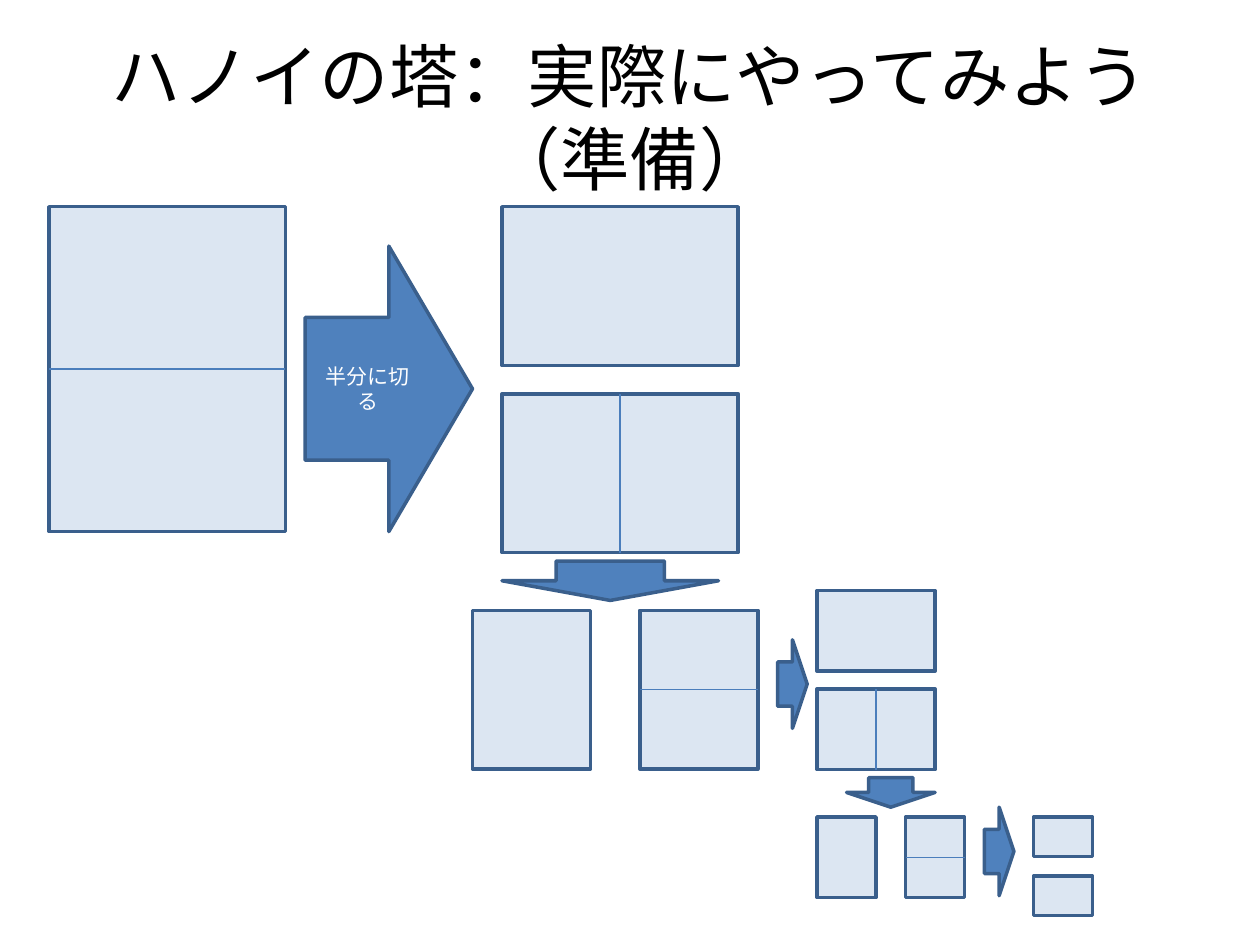
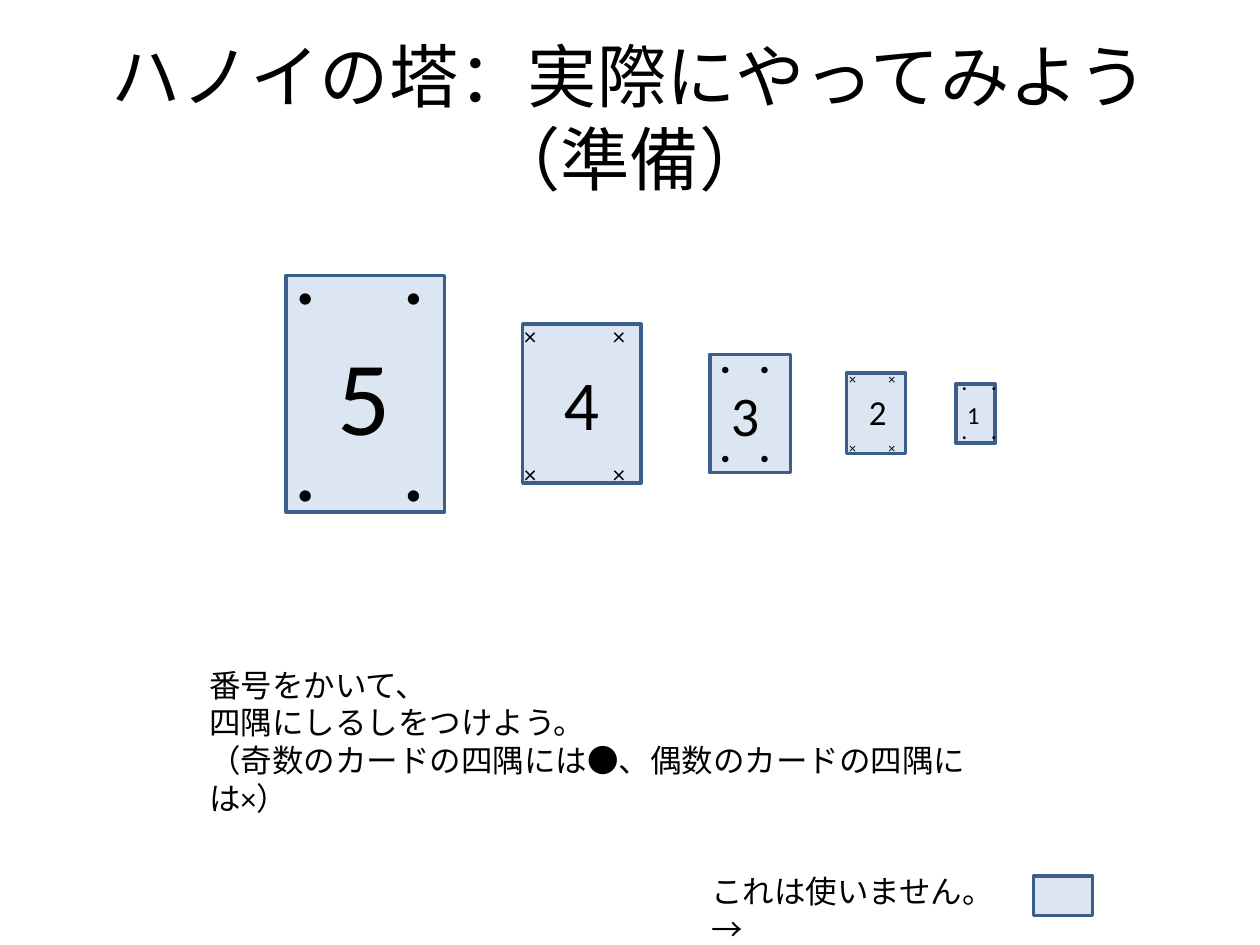
from itertools import product

from lxml import etree
from pptx import Presentation
from pptx.dml.color import RGBColor
from pptx.enum.shapes import MSO_CONNECTOR, MSO_SHAPE
from pptx.enum.text import MSO_ANCHOR, PP_ALIGN
from pptx.oxml.ns import qn
from pptx.util import Inches, Pt

PAPER = RGBColor(0xDC, 0xE6, 0xF2)
EDGE = RGBColor(0x3A, 0x5F, 0x8C)
ARROW = RGBColor(0x4F, 0x81, 0xBD)
CREASE = RGBColor(0x4B, 0x7E, 0xBC)
BLACK = RGBColor(0, 0, 0)
WHITE = RGBColor(255, 255, 255)

RECTANGLE = MSO_SHAPE.RECTANGLE
RIGHT = MSO_SHAPE.RIGHT_ARROW
DOWN = MSO_SHAPE.DOWN_ARROW
STRAIGHT = MSO_CONNECTOR.STRAIGHT
CENTER = PP_ALIGN.CENTER
LEFT = PP_ALIGN.LEFT
MIDDLE = MSO_ANCHOR.MIDDLE
TOP = MSO_ANCHOR.TOP

COLUMNS = 128
ROWS = 96
TITLE = "ハノイの塔：実際にやってみよう\v（準備）"

FULL = (24, 33)
HALF = (24, 16.13)
QUARTER = (12, 16.13)
EIGHTH = (12, 8.19)
SIXTEENTH = (6, 8.19)
SMALLEST = (6, 4)
ACROSS = (1, 3)
DOWNWARD = (0, 2)

PIECES = {
    "sheet": (5, 21, FULL, ACROSS),
    "kept half": (51, 21, HALF, None),
    "cut half": (51, 40, HALF, DOWNWARD),
    "kept quarter": (48, 62, QUARTER, None),
    "cut quarter": (65, 62, QUARTER, ACROSS),
    "kept eighth": (83, 60, EIGHTH, None),
    "cut eighth": (83, 70, EIGHTH, DOWNWARD),
    "kept sixteenth": (83, 83, SIXTEENTH, None),
    "cut sixteenth": (92, 83, SIXTEENTH, ACROSS),
    "first smallest": (105, 83, SMALLEST, None),
    "unused smallest": (105, 89, SMALLEST, None),
}

ARROWS = [
    (RIGHT, (31, 25, 17, 29), "半分に切る"),
    (DOWN, (51, 57, 22, 4), ""),
    (RIGHT, (79, 65, 3, 9), ""),
    (DOWN, (86, 79, 9, 3), ""),
    (RIGHT, (100, 82, 3, 9), ""),
]

CARDS = [
    dict(center=(37.1, 40), size=HALF, turn=90, number="5", number_size=60,
         number_area=(33, 33, 8, 14.2), mark="●", mark_size=14,
         mark_box=(5.1, 4.3), lefts=(29, 40), tops=(28, 48)),
    dict(center=(59.1, 41), size=QUARTER, turn=0, number="4", number_size=40,
         number_area=(56, 36, 6.3, 9.9), mark="×", mark_size=14,
         mark_box=(5.1, 4.3), lefts=(52, 61), tops=(32, 46)),
    dict(center=(76.2, 42), size=EIGHTH, turn=270, number="3", number_size=32,
         number_area=(73, 38, 5, 8.2), mark="●", mark_size=8,
         mark_box=(4, 3), lefts=(72, 76), tops=(36, 45)),
    dict(center=(89, 42), size=SIXTEENTH, turn=0, number="2", number_size=20,
         number_area=(87, 39, 5, 5.6), mark="×", mark_size=8,
         mark_box=(4, 3), lefts=(85, 89), tops=(37, 44)),
    dict(center=(99.1, 42), size=SMALLEST, turn=90, number="1", number_size=14,
         number_area=(97, 40, 5, 4.3), mark="・", mark_size=8,
         mark_box=(3.3, 3), lefts=(96, 99), tops=(38, 43)),
]


class Lesson:
    def __init__(self):
        self.deck = Presentation()
        self.deck.slide_width = Inches(10)
        self.deck.slide_height = Inches(7.5)
        self.page = None
        self.canvas = None

    def start_page(self):
        self.page = self.deck.slides.add_slide(self.deck.slide_layouts[6])
        self.canvas = self.page.shapes
        self.text((6.4, 3.84, 115.2, 16), [TITLE], 39.6, align=CENTER, anchor=MIDDLE)

    def place(self, area):
        column = self.deck.slide_width / COLUMNS
        row = self.deck.slide_height / ROWS
        return [round(value * unit) for value, unit in zip(area, (column, row) * 2)]

    def fill_text(self, frame, lines, size, color, align, anchor):
        frame.word_wrap = True
        frame.vertical_anchor = anchor
        frame.text = "\n".join(lines)
        style = {"name": "Calibri", "size": Pt(size)}
        for para in frame.paragraphs:
            para.alignment = align
            for span in para.runs:
                for key, value in style.items():
                    setattr(span.font, key, value)
                span.font.color.rgb = color

    def text(self, area, lines, size, align=LEFT, anchor=TOP):
        box = self.canvas.add_textbox(*self.place(area))
        self.fill_text(box.text_frame, lines, size, BLACK, align, anchor)

    def shape(self, kind, area, fill):
        box = self.canvas.add_shape(kind, *self.place(area))
        box.shadow.inherit = False
        box.fill.solid()
        box.fill.fore_color.rgb = fill
        box.line.color.rgb = EDGE
        box.line.width = Pt(2)
        return box

    def paper(self, left, top, size):
        return self.shape(RECTANGLE, (left, top, *size), PAPER)

    def arrow(self, kind, area, label):
        box = self.shape(kind, area, ARROW)
        if label:
            self.fill_text(box.text_frame, [label], 12, WHITE, CENTER, MIDDLE)

    def crease(self, box, sides):
        line = self.canvas.add_connector(STRAIGHT, 0, 0, 0, 0)
        line.begin_connect(box, sides[0])
        line.end_connect(box, sides[1])
        line.line.color.rgb = CREASE
        line.line.width = Pt(0.75)
        properties = line._element.find(qn("p:spPr"))
        etree.SubElement(properties, qn("a:effectLst"))

    def card(self, center, size, turn, number, number_size, number_area,
             mark, mark_size, mark_box, lefts, tops):
        self.canvas = self.page.shapes.add_group_shape().shapes
        left, top = (middle - length / 2 for middle, length in zip(center, size))
        self.paper(left, top, size).rotation = turn
        self.text(number_area, [number], number_size)
        for mark_top, mark_left in product(tops, lefts):
            self.text((mark_left, mark_top, *mark_box), [mark], mark_size)
        self.canvas = self.page.shapes


def build_cutting(lesson):
    lesson.start_page()
    folds = []
    for left, top, size, sides in PIECES.values():
        box = lesson.paper(left, top, size)
        if sides:
            folds.append((box, sides))
    for kind, area, label in ARROWS:
        lesson.arrow(kind, area, label)
    for box, sides in folds:
        lesson.crease(box, sides)


def build_marking(lesson):
    lesson.start_page()
    left, top, size, _ = PIECES["unused smallest"]
    lesson.paper(left, top, size)
    lesson.text((71, 88, 32.1, 5.1), ["これは使いません。→"], 18)
    lesson.text((20, 67, 81.9, 12.9), [
        "番号をかいて、",
        "四隅にしるしをつけよう。",
        "（奇数のカードの四隅には●、偶数のカードの四隅には×）",
    ], 18)
    for card in CARDS:
        lesson.card(**card)


def main():
    lesson = Lesson()
    build_cutting(lesson)
    build_marking(lesson)
    lesson.deck.save("out.pptx")


if __name__ == "__main__":
    main()
